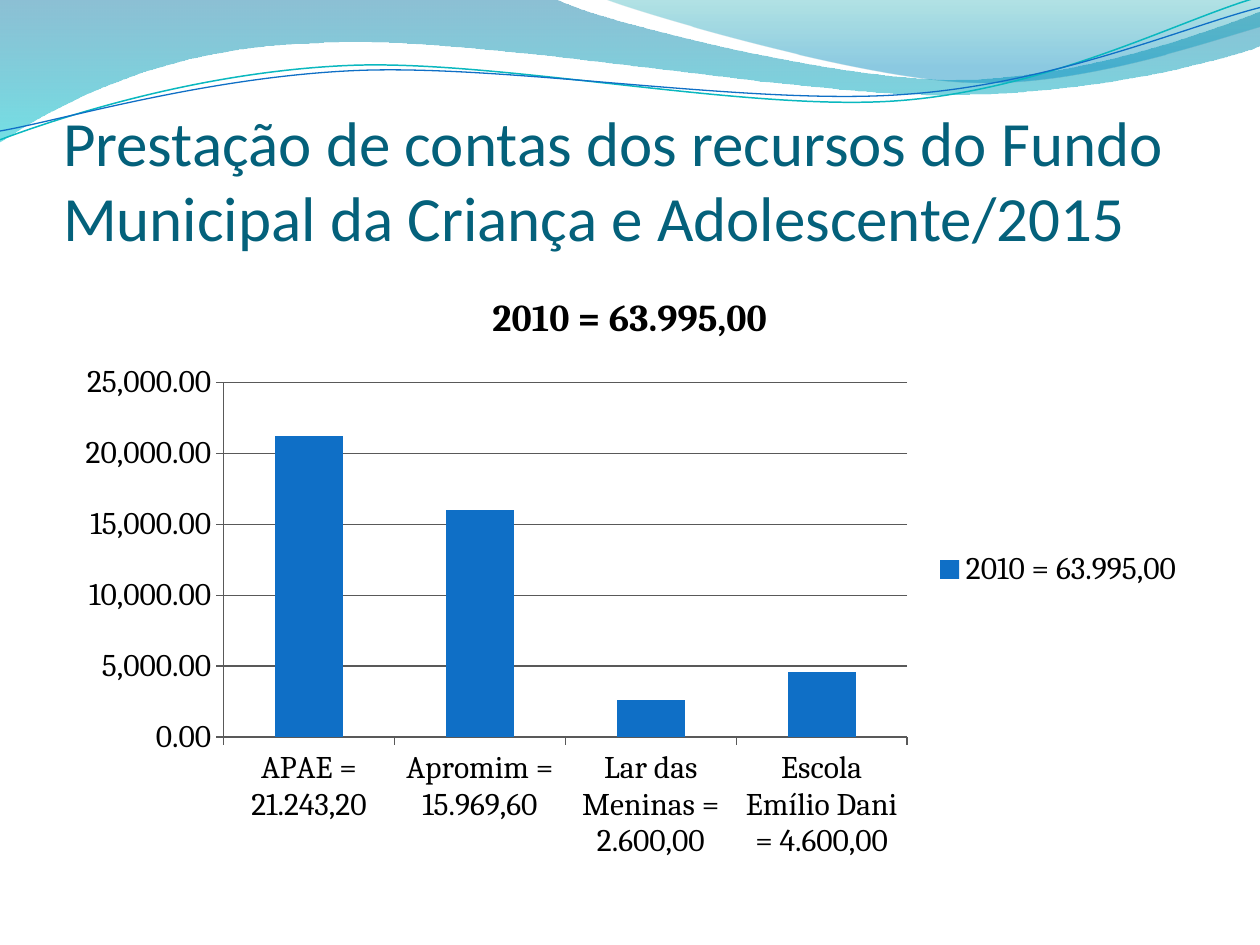
from lxml import etree
from pptx import Presentation
from pptx.chart.data import CategoryChartData
from pptx.dml.color import RGBColor
from pptx.enum.chart import XL_CHART_TYPE, XL_LEGEND_POSITION, XL_TICK_MARK
from pptx.enum.text import MSO_ANCHOR, MSO_AUTO_SIZE, PP_ALIGN
from pptx.oxml.ns import qn
from pptx.util import Inches, Pt

COLUMNS = XL_CHART_TYPE.COLUMN_CLUSTERED
LEGEND_RIGHT = XL_LEGEND_POSITION.RIGHT
TICK_OUT = XL_TICK_MARK.OUTSIDE
TICK_NONE = XL_TICK_MARK.NONE
BOTTOM = MSO_ANCHOR.BOTTOM
NO_AUTOFIT = MSO_AUTO_SIZE.NONE
LEFT = PP_ALIGN.LEFT

BLACK = RGBColor(0x00, 0x00, 0x00)
AXIS_GRAY = RGBColor(0x59, 0x59, 0x59)
TITLE_TEAL = RGBColor(0x04, 0x61, 0x7B)
BLUE = RGBColor(0x0F, 0x6F, 0xC6)
LINE_TEAL = RGBColor(0x0A, 0xB8, 0xBF)
DEEP_BLUE = RGBColor(0x00, 0x74, 0xA1)
CYAN = RGBColor(0x00, 0xC6, 0xCF)
SEA_GREEN = RGBColor(0x00, 0xA1, 0xA9)
SKY_BLUE = RGBColor(0x00, 0x8B, 0xBF)


class WaveSlide:
    title_font = "Calibri"
    chart_font = "Cambria"
    title_size = Pt(36)
    chart_size = Pt(18)
    chart_title_size = Pt(21.6)

    def __init__(self, presentation):
        self.slide = presentation.slides.add_slide(presentation.slide_layouts[5])

    def outline(self, start, segments, closed):
        ends = [(Inches(s[-2]), Inches(s[-1])) for s in segments]
        builder = self.slide.shapes.build_freeform(Inches(start[0]), Inches(start[1]))
        builder.add_line_segments(ends, close=closed)
        shape = builder.convert_to_shape()
        shape.shadow.inherit = False
        straights = list(shape._element.spPr.iter(qn("a:lnTo")))
        for straight, segment in zip(straights, segments):
            if len(segment) == 6:
                self.bend(straight, segment[:4], shape.left, shape.top)
        return shape

    def bend(self, straight, controls, left, top):
        straight.tag = qn("a:cubicBezTo")
        for index in (0, 2):
            control = etree.Element(qn("a:pt"))
            control.set("x", str(Inches(controls[index]) - left))
            control.set("y", str(Inches(controls[index + 1]) - top))
            straight.insert(index // 2, control)

    def wave(self, start, segments, stops):
        band = self.outline(start, segments, True)
        band.line.fill.background()
        band.fill.gradient()
        band.fill.gradient_angle = 270
        for stop, (position, color, opacity) in zip(band.fill.gradient_stops, stops):
            stop.position = position
            stop.color.rgb = color
        tones = band._element.spPr.iter(qn("a:srgbClr"))
        for tone, (position, color, opacity) in zip(tones, stops):
            etree.SubElement(tone, qn("a:alpha")).set("val", str(opacity * 1000))

    def ripple(self, start, segments, color, width):
        curve = self.outline(start, segments, False)
        curve.fill.background()
        curve.line.color.rgb = color
        curve.line.width = Pt(width)

    def title(self, text, left, top, width, height):
        heading = self.slide.shapes.title
        heading.left, heading.top = Inches(left), Inches(top)
        heading.width, heading.height = Inches(width), Inches(height)
        frame = heading.text_frame
        frame.text = text
        frame.word_wrap = True
        frame.auto_size = NO_AUTOFIT
        frame.vertical_anchor = BOTTOM
        frame.margin_left = frame.margin_right = frame.margin_bottom = 0
        frame.margin_top = Inches(0.05)
        paragraph = frame.paragraphs[0]
        paragraph.alignment = LEFT
        self.style(paragraph.runs[0].font, self.title_font, self.title_size, TITLE_TEAL)

    def style(self, font, name, size, color):
        font.name = name
        font.size = size
        font.color.rgb = color

    def columns(self, name, amounts, left, top, width, height):
        data = CategoryChartData(number_format="#,##0.00")
        data.categories = list(amounts)
        data.add_series(name, amounts.values())
        chart = self.slide.shapes.add_chart(
            COLUMNS, Inches(left), Inches(top), Inches(width), Inches(height), data
        ).chart
        self.style(chart.font, self.chart_font, self.chart_size, BLACK)

        chart.has_title = True
        caption = chart.chart_title.text_frame
        caption.text = name
        caption_font = caption.paragraphs[0].runs[0].font
        self.style(caption_font, self.chart_font, self.chart_title_size, BLACK)
        caption_font.bold = True

        chart.has_legend = True
        chart.legend.position = LEGEND_RIGHT
        chart.legend.include_in_layout = False

        plot = chart.plots[0]
        plot.gap_width = 150
        plot.vary_by_categories = False
        bars = plot.series[0].format.fill
        bars.solid()
        bars.fore_color.rgb = BLUE

        amount_axis = chart.value_axis
        amount_axis.has_major_gridlines = True
        for axis in (chart.category_axis, amount_axis):
            axis.major_tick_mark = TICK_OUT
            axis.minor_tick_mark = TICK_NONE
        for ruled in (chart.category_axis, amount_axis, amount_axis.major_gridlines):
            ruled.format.line.color.rgb = AXIS_GRAY
            ruled.format.line.width = Pt(0.75)
        amount_axis.tick_labels.number_format = "#,##0.00"
        amount_axis.tick_labels.number_format_is_linked = False


def main():
    presentation = Presentation()
    presentation.slide_width, presentation.slide_height = Inches(10), Inches(7.5)
    page = WaveSlide(presentation)

    page.wave(
        (0, 0),
        [(4.4, -0.01), (4.76, 0.17, 6.64, 0.63, 7.58, 0.63),
         (8.53, 0.63, 9.58, 0.26, 10, 0.09), (10.01, 0.36),
         (9.83, 0.44, 8.7, 0.76, 7.46, 0.75),
         (6.22, 0.75, 3.82, 0.28, 2.57, 0.34),
         (1.29, 0.36, 0.46, 0.83, -0.01, 1.13)],
        [(0, DEEP_BLUE, 45), (1, CYAN, 55)])
    page.wave(
        (4.79, -0.01),
        [(5.09, 0.11, 6.82, 0.62, 7.69, 0.65),
         (8.56, 0.69, 9.61, 0.32, 10, 0.21), (10, 0)],
        [(0, SEA_GREEN, 30), (0.8, SKY_BLUE, 45)])
    page.ripple(
        (0, 1.11),
        [(0.48, 0.93, 1.58, 0.57, 2.77, 0.52),
         (3.95, 0.47, 5.93, 0.89, 7.13, 0.8),
         (8.33, 0.71, 9.38, 0.15, 9.98, -0.02)],
        LINE_TEAL, 0.85)
    page.ripple(
        (0, 1.04),
        [(0.47, 0.96, 1.64, 0.61, 2.83, 0.56),
         (4.03, 0.51, 5.97, 0.84, 7.17, 0.75),
         (8.36, 0.67, 9.41, 0.21, 10, 0.06)],
        BLUE, 0.75)

    page.title(
        "Prestação de contas dos recursos do Fundo Municipal da Criança e Adolescente/2015",
        0.5, 0.77, 9, 1.25)
    page.columns(
        "2010 = 63.995,00",
        {
            "APAE = 21.243,20": 21200,
            "Apromim = 15.969,60": 16000,
            "Lar das Meninas = 2.600,00": 2600,
            "Escola Emílio Dani = 4.600,00": 4600,
        },
        0.5, 2.12, 9, 4.8)

    presentation.save("out.pptx")


if __name__ == "__main__":
    main()
